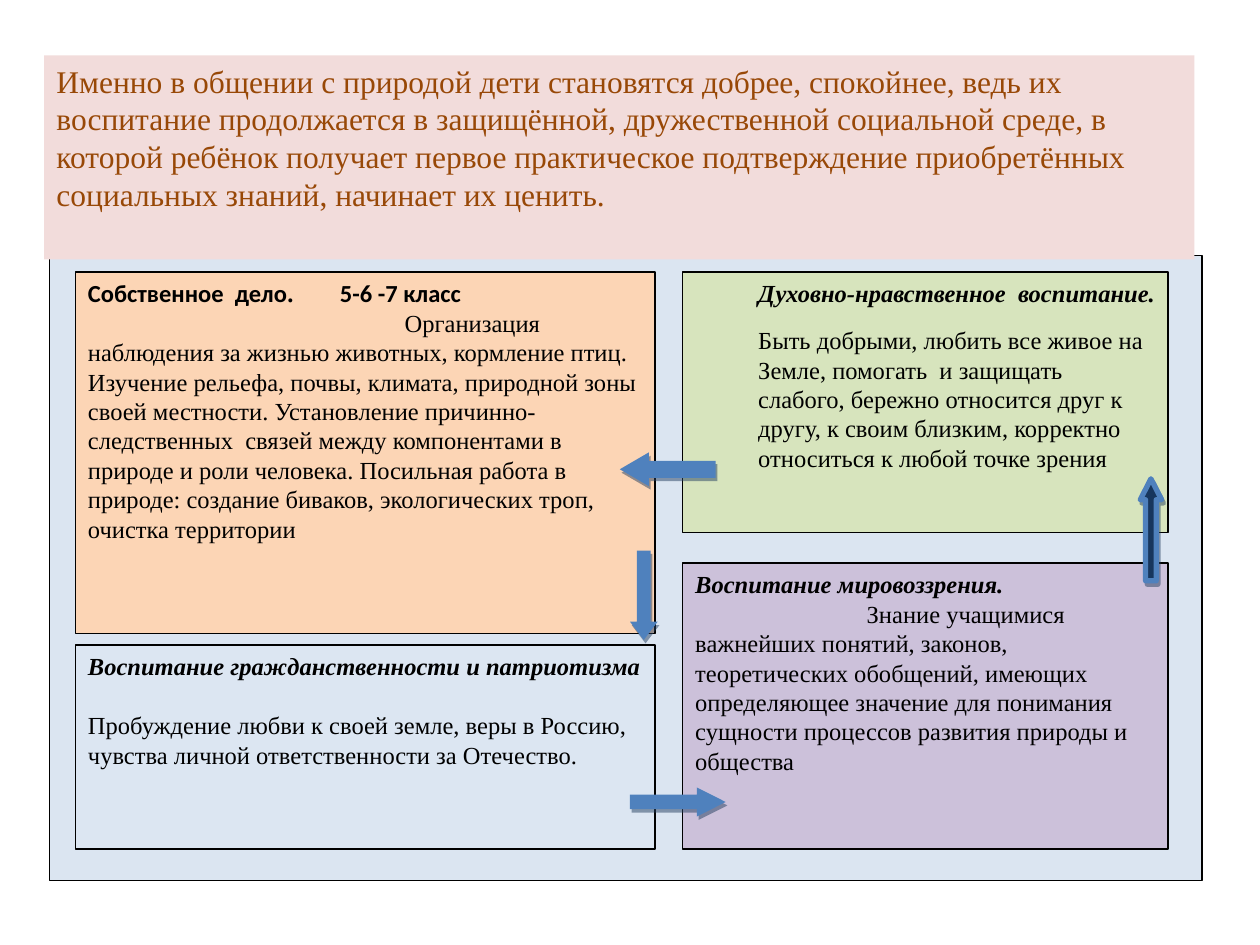
import dataclasses

import lxml.etree
import pptx
import pptx.dml.color
import pptx.enum.shapes
import pptx.enum.text
import pptx.oxml.ns
import pptx.util

Pt = pptx.util.Pt
KIND = pptx.enum.shapes.MSO_SHAPE


@dataclasses.dataclass(frozen=True)
class Theme:
    """Hold the colours, fonts and type sizes of the slide."""
    ink: str = "000000"
    brown: str = "984807"
    rose: str = "F2DCDB"
    panel: str = "DBE5F1"
    peach: str = "FCD5B5"
    green: str = "D7E4BD"
    lilac: str = "CCC1DA"
    pale: str = "DCE6F2"
    blue: str = "4F81BD"
    navy: str = "17365D"
    shade: str = "243F60"
    serif: str = "Times New Roman"
    sans: str = "Calibri"
    lead: int = 18
    body: int = 14


THEME = Theme()
HEAD = {"bold": True, "italic": True}


def rgb(code):
    """Turn a hex code into a colour."""
    return pptx.dml.color.RGBColor.from_string(code)


def apply(thing, form):
    """Set each format value on the thing."""
    for name, value in form.items():
        setattr(thing, name, value)


def node(up, tag, **attrs):
    """Add a drawing element under its parent."""
    return lxml.etree.SubElement(up, pptx.oxml.ns.qn(tag), attrs)


def add_form(shapes, kind, area, fill, line=None, width=0.75):
    """Add a filled shape with an optional outline."""
    form = shapes.add_shape(kind, *map(Pt, area))
    form.shadow.inherit = False
    form.fill.solid()
    form.fill.fore_color.rgb = rgb(fill)
    if line:
        form.line.color.rgb = rgb(line)
        form.line.width = Pt(width)
    else:
        form.line.fill.background()
    return form


def add_arrow(shapes, kind, area, head, fill=THEME.blue, line=None):
    """Add a block arrow with a hard shadow."""
    arrow = add_form(shapes, kind, area, fill, line, 3)
    arrow.adjustments[1] = head
    effect = arrow._element.spPr.find(pptx.oxml.ns.qn("a:effectLst"))
    shadow = node(effect, "a:outerShdw", blurRad="0", dist=str(Pt(2.2)),
                  dir=str(63 * 60000), rotWithShape="0")
    tint = node(shadow, "a:srgbClr", val=THEME.shade)
    node(tint, "a:alpha", val="50000")


def add_para(frame, first, runs, after=10, left=0, indent=0, tab=None,
             size=THEME.body, color=THEME.ink):
    """Write one paragraph of formatted runs."""
    para = frame.paragraphs[0] if first else frame.add_paragraph()
    apply(para, {"alignment": pptx.enum.text.PP_ALIGN.LEFT,
                 "space_after": Pt(after)})
    props = para._p.get_or_add_pPr()
    props.set("marL", str(Pt(left)))
    props.set("indent", str(Pt(indent)))
    if tab:
        node(node(props, "a:tabLst"), "a:tab", pos=str(Pt(tab)), algn="l")
    for text, form in runs:
        run = para.add_run()
        run.text = text
        apply(run.font, {"name": THEME.serif, "size": Pt(size),
                         "bold": False, "italic": False, **form})
        run.font.color.rgb = rgb(color)


def add_card(shapes, area, fill, paras, line=THEME.ink):
    """Add a box with its paragraphs."""
    card = add_form(shapes, KIND.RECTANGLE, area, fill, line)
    frame = card.text_frame
    apply(frame, {"word_wrap": True,
                  "vertical_anchor": pptx.enum.text.MSO_ANCHOR.TOP})
    for rank, para in enumerate(paras):
        add_para(frame, rank == 0, **para)


def add_cards(shapes):
    """Add the four topic cards in two columns."""
    left, right, top = 43.2, 390.2, 155.5
    wide, slim = 331.2, 277.2
    sans = {"name": THEME.sans, "bold": True}
    add_card(shapes, (left, top, wide, 206.6), THEME.peach, [
        {"runs": [("Собственное  дело", sans), (".", {"bold": True}),
                  ("\t5-6 -7 класс", sans)], "after": 0, "tab": 187},
        {"runs": [("Организация наблюдения за жизнью животных, кормление птиц. "
                   "Изучение рельефа, почвы, климата, природной зоны своей "
                   "местности. Установление причинно-следственных  связей между "
                   "компонентами в природе и роли человека. Посильная работа в "
                   "природе: создание биваков, экологических троп, очистка "
                   "территории", {})], "indent": 181}])
    add_card(shapes, (right, top, slim, 149), THEME.green, [
        {"runs": [("Духовно-нравственное  воспитание.", HEAD)], "left": 36},
        {"runs": [("Быть добрыми, любить все живое на Земле, помогать  и "
                   "защищать слабого, бережно относится друг к другу, к своим "
                   "близким, корректно относиться к любой точке зрения", {})],
         "left": 36}])
    add_card(shapes, (right, 321.8, slim, 163.4), THEME.lilac, [
        {"runs": [("Воспитание мировоззрения.", HEAD)], "after": 0},
        {"runs": [("Знание учащимися важнейших понятий, законов, теоретических "
                   "обобщений, имеющих определяющее значение для понимания "
                   "сущности процессов развития природы и общества", {})],
         "indent": 98}])
    add_card(shapes, (left, 368.6, wide, 116.6), THEME.pale, [
        {"runs": [("Воспитание гражданственности и патриотизма", HEAD)],
         "after": 17},
        {"runs": [("Пробуждение любви к своей земле, веры в Россию, чувства "
                   "личной ответственности за Отечество.", {})]}])


def add_cycle(shapes):
    """Add the arrows that link the cards."""
    add_arrow(shapes, KIND.UP_ARROW, (651.6, 273.6, 12.2, 58.3), 0.98,
              THEME.navy, THEME.blue)
    add_arrow(shapes, KIND.LEFT_ARROW, (354.2, 258.5, 54.7, 19.4), 0.86)
    add_arrow(shapes, KIND.RIGHT_ARROW, (360, 450, 54.7, 16.6), 0.99)
    add_arrow(shapes, KIND.DOWN_ARROW, (360, 314.6, 15.8, 51.1), 0.66)


def main():
    """Build and save the slide."""
    deck = pptx.Presentation()
    apply(deck, {"slide_width": Pt(720), "slide_height": Pt(540)})
    slide = deck.slides.add_slide(deck.slide_layouts[6])
    group = slide.shapes.add_group_shape().shapes
    add_form(group, KIND.RECTANGLE, (28.1, 146.2, 658.8, 357.1),
             THEME.panel, THEME.ink)
    add_cards(group)
    add_cycle(group)
    add_card(slide.shapes, (25.2, 31.7, 657.4, 116.6), THEME.rose, [
        {"runs": [("Именно в общении с природой дети становятся добрее, "
                   "спокойнее, ведь их воспитание продолжается в защищённой, "
                   "дружественной социальной среде, в которой ребёнок получает "
                   "первое практическое подтверждение приобретённых социальных "
                   "знаний, начинает их ценить.", {})],
         "after": 0, "size": THEME.lead, "color": THEME.brown}], None)
    deck.save("out.pptx")


if __name__ == "__main__":
    main()
